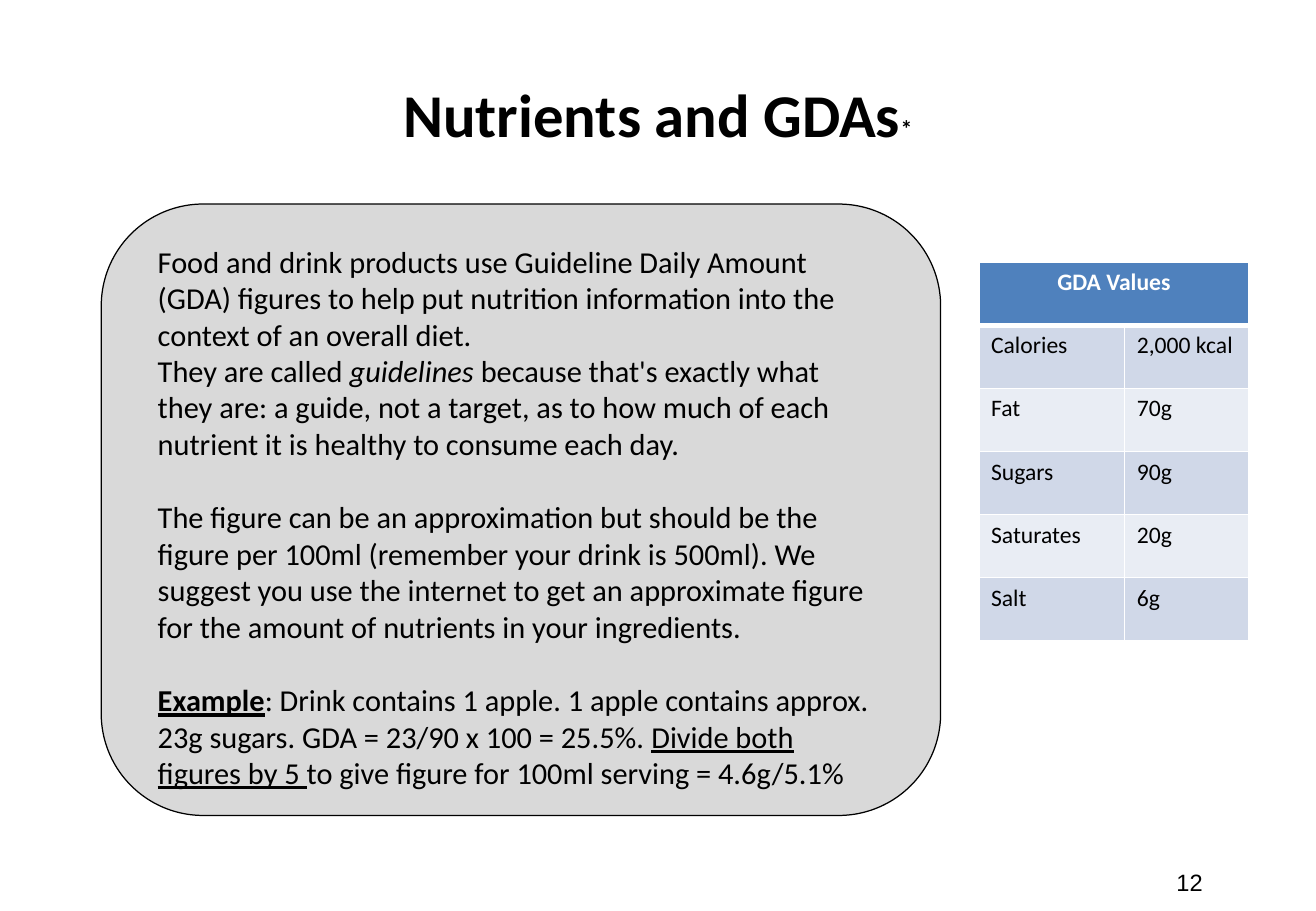
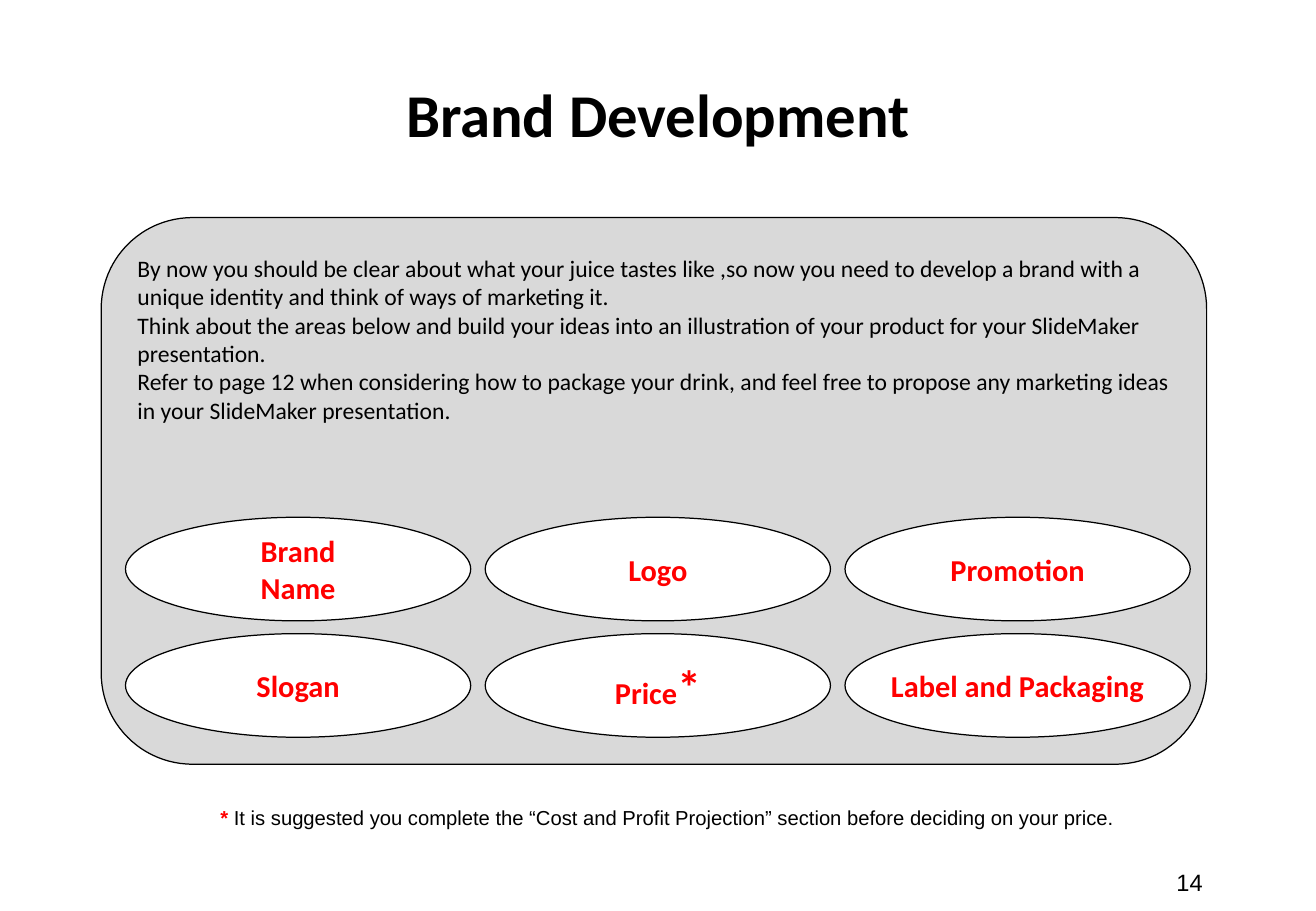
"""Build two workbook slides: nutrient guidelines and brand development."""
from dataclasses import dataclass, replace
from itertools import product

from lxml.etree import SubElement
from pptx import Presentation
from pptx.dml.color import RGBColor as Rgb
from pptx.enum.shapes import MSO_SHAPE as Shape
from pptx.enum.text import MSO_ANCHOR as Anchor, MSO_AUTO_SIZE as AutoSize, PP_ALIGN as Align
from pptx.oxml.ns import qn
from pptx.util import Inches, Pt

CELL = Inches(1) / 6
COLUMNS, ROWS = 65, 45


@dataclass(frozen=True)
class Style:
    """Look of a run of text."""
    size: int
    colour: str = "000000"
    font: str = "Calibri"
    bold: bool = False
    italic: bool = False
    underline: bool = False


@dataclass(frozen=True)
class Theme:
    """Colours, line weights and text styles of the deck."""
    panel: str = "D9D9D9"
    paper: str = "FFFFFF"
    ink: str = "000000"
    header: str = "4F81BD"
    bands: tuple = ("D0D8E8", "E9EDF4")
    outline: float = 0.75
    rule: int = 1
    header_rule: int = 3
    title: Style = Style(36, bold=True)
    body: Style = Style(18)
    small: Style = Style(14)
    table_head: Style = Style(14, "FFFFFF", bold=True)
    topic: Style = Style(18, "FF0000", bold=True)
    note: Style = Style(12, font="Arial")
    number: Style = Style(14, font="Arial")


THEME = Theme()


def grid(*lengths):
    """Turn grid columns or rows into slide units."""
    return [round(length * CELL) for length in lengths]


class Page:
    """One slide with a method for each kind of element."""

    def __init__(self, deck, title, number):
        """Add a slide with its title and page number."""
        self.slide = deck.slides.add_slide(deck.slide_layouts[5])
        heading = self.slide.shapes.title
        heading.left, heading.top, heading.width, heading.height = grid(3.25, 3.5, 58.5, 4.8)
        heading.text_frame.auto_size = AutoSize.NONE
        heading.text_frame.vertical_anchor = Anchor.TOP
        self.set_text(heading.text_frame, [title], THEME.title, Align.CENTER)
        self.text((44.8, 42.6, 15.2, 2.4), [number], THEME.number, Align.RIGHT)

    def set_text(self, frame, paragraphs, style, align=Align.LEFT, gaps=None):
        """Fill a frame; a paragraph is a string or a list of (text, changes)."""
        for index, content in enumerate(paragraphs):
            para = frame.add_paragraph() if index else frame.paragraphs[0]
            para.alignment = align
            para.space_before = Pt((gaps or {}).get(index, 0))
            spans = [(content, {})] if isinstance(content, str) else content
            for text, changes in spans:
                span = para.add_run()
                span.text = text
                look, font = replace(style, **changes), span.font
                font.name, font.size = look.font, Pt(look.size)
                font.bold, font.italic = look.bold, look.italic
                font.underline = look.underline
                font.color.rgb = Rgb.from_string(look.colour)

    def text(self, area, paragraphs, style, align=Align.LEFT, gaps=None, anchor=Anchor.TOP):
        """Add a wrapping text box."""
        frame = self.slide.shapes.add_textbox(*grid(*area)).text_frame
        frame.word_wrap = True
        frame.vertical_anchor = anchor
        self.set_text(frame, paragraphs, style, align, gaps)

    def shape(self, kind, area, fill):
        """Add an outlined shape."""
        shape = self.slide.shapes.add_shape(kind, *grid(*area))
        shape.shadow.inherit = False
        shape.fill.solid()
        shape.fill.fore_color.rgb = Rgb.from_string(fill)
        shape.line.color.rgb = Rgb.from_string(THEME.ink)
        shape.line.width = Pt(THEME.outline)
        return shape

    def panel(self, *area):
        """Add the rounded grey panel."""
        self.shape(Shape.FLOWCHART_ALTERNATE_PROCESS, area, THEME.panel)

    def topic(self, area, paragraphs):
        """Add a white ellipse with a centred label."""
        frame = self.shape(Shape.OVAL, area, THEME.paper).text_frame
        frame.word_wrap = False
        frame.vertical_anchor = Anchor.MIDDLE
        self.set_text(frame, paragraphs, THEME.topic, Align.CENTER)

    def borders(self, cell, top, bottom):
        """Draw white rules round a table cell."""
        properties = cell._tc.get_or_add_tcPr()
        widths = {"L": THEME.rule, "R": THEME.rule, "T": top, "B": bottom}
        for side, width in widths.items():
            line = SubElement(properties, qn(f"a:ln{side}"), w=str(Pt(width)))
            SubElement(SubElement(line, qn("a:solidFill")), qn("a:srgbClr"), val=THEME.paper)

    def table(self, left, top, widths, row_height, heading, rows):
        """Add a banded table under one merged heading."""
        area = grid(left, top, sum(widths), row_height * (len(rows) + 1))
        table = self.slide.shapes.add_table(len(rows) + 1, len(widths), *area).table
        for column, width in zip(table.columns, grid(*widths)):
            column.width = width
        table.cell(0, 0).merge(table.cell(0, len(widths) - 1))
        self.set_text(table.cell(0, 0).text_frame, [heading], THEME.table_head, Align.CENTER)
        for row, column in product(range(len(rows) + 1), range(len(widths))):
            cell = table.cell(row, column)
            self.borders(cell, THEME.header_rule if row == 1 else THEME.rule,
                         THEME.rule if row else THEME.header_rule)
            cell.fill.solid()
            fill = THEME.bands[(row - 1) % 2] if row else THEME.header
            cell.fill.fore_color.rgb = Rgb.from_string(fill)
            if row:
                self.set_text(cell.text_frame, [rows[row - 1][column]], THEME.small)


def add_nutrients(deck):
    """Explain guideline amounts beside their table."""
    page = Page(deck, [("Nutrients and GDAs", {}), ("*", {"size": 14})], "12")
    page.panel(5, 10.08, 41.46, 30.2)
    page.text((7.2, 11.7, 36.66, 27.84), [
        "Food and drink products use Guideline Daily Amount (GDA) figures to help put "
        "nutrition information into the context of an overall diet.",
        [("They are called ", {}), ("guidelines", {"italic": True}),
         (" because that's exactly what they are: a guide, not a target, as to how much "
          "of each nutrient it is healthy to consume each day.", {})],
        "The figure can be an approximation but should be the figure per 100ml (remember "
        "your drink is 500ml). We suggest you use the internet to get an approximate "
        "figure for the amount of nutrients in your ingredients.",
        [("Example", {"bold": True, "underline": True}),
         (": Drink contains 1 apple. 1 apple contains approx. 23g sugars. "
          "GDA = 23/90 x 100 = 25.5%. ", {}),
         ("Divide both figures by 5 ", {"underline": True}),
         ("to give figure for 100ml serving = 4.6g/5.1%", {})],
    ], THEME.body, gaps={2: 22, 3: 22})
    page.table(48.35, 12.95, (7.2, 6.15), 3.12, "GDA Values", [
        ("Calories", "2,000 kcal"), ("Fat", "70g"), ("Sugars", "90g"),
        ("Saturates", "20g"), ("Salt", "6g")])


def add_brand(deck):
    """Show the areas of brand development."""
    page = Page(deck, "Brand Development", "14")
    page.panel(5, 10.75, 54.6, 27)
    page.text((6.2, 12.25, 52.55, 10.7), [
        "By now you should be clear about what your juice tastes like ,so now you need to "
        "develop a brand with a unique identity and think of ways of marketing it.",
        "Think about the areas below and build your ideas into an illustration of your "
        "product for your SlideMaker presentation.",
        "Refer to page 12 when considering how to package your drink, and feel free to "
        "propose any marketing ideas in your SlideMaker presentation.",
    ], THEME.small)
    topics = [["Brand", "Name"], ["Logo"], ["Promotion"],
              ["Slogan"], [[("Price", {}), ("*", {"size": 28})]], ["Label and Packaging"]]
    for index, label in enumerate(topics):
        row, column = divmod(index, 3)
        page.topic((6.2 + 17.77 * column, 25.55 + 5.75 * row, 17.05, 5.12), label)
    page.text((10.3, 39.5, 48.85, 1.8), [[
        ("* ", {"colour": THEME.topic.colour, "bold": True}),
        ("It is suggested you complete the “Cost and Profit Projection” section before "
         "deciding on your price.", {}),
    ]], THEME.note, anchor=Anchor.MIDDLE)


def main():
    """Build and save the deck."""
    deck = Presentation()
    deck.slide_width, deck.slide_height = grid(COLUMNS, ROWS)
    add_nutrients(deck)
    add_brand(deck)
    deck.save("out.pptx")


if __name__ == "__main__":
    main()
